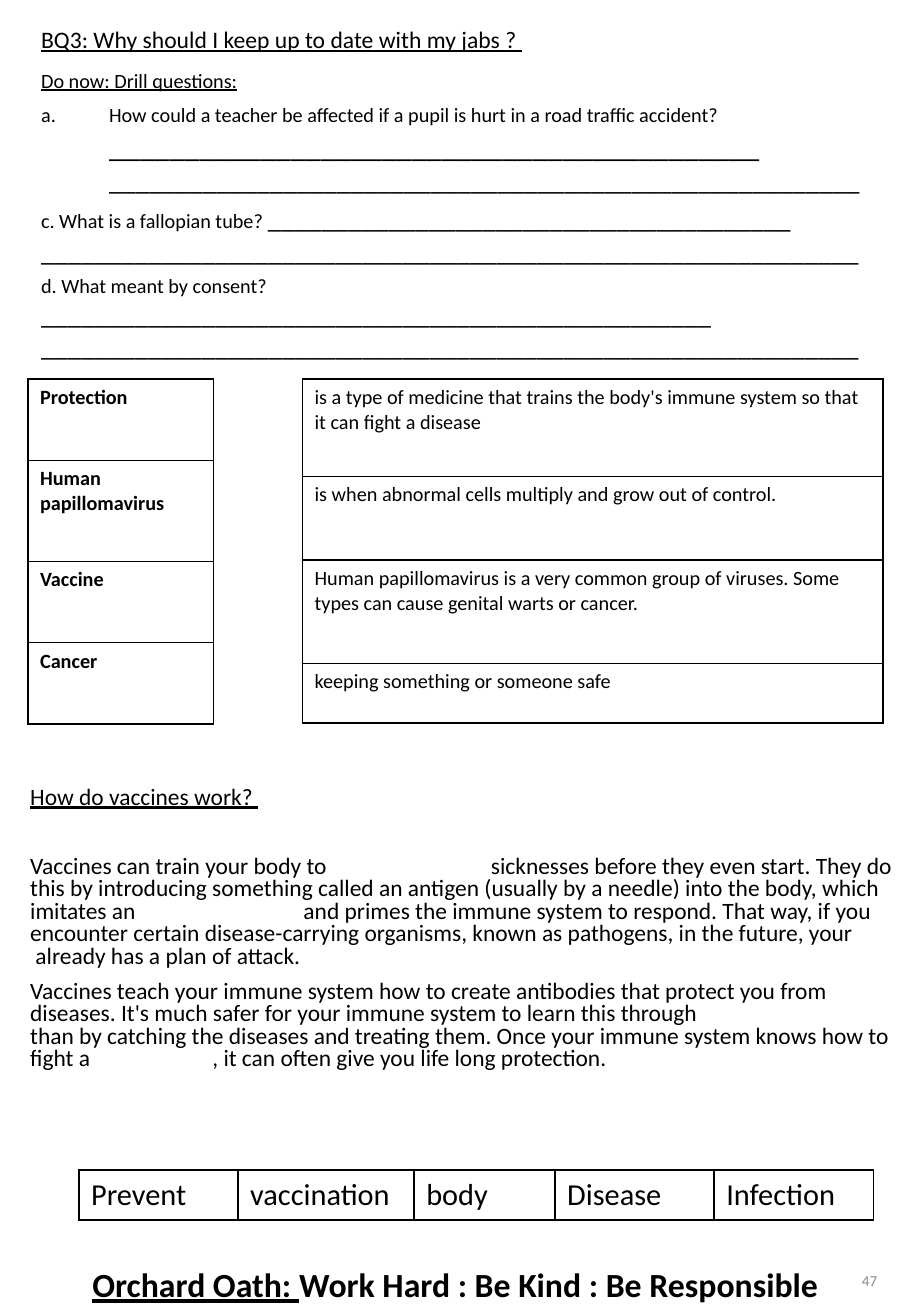
from lxml.etree import SubElement as Sub
from pptx import Presentation as Deck
from pptx.dml.color import RGBColor as Rgb
from pptx.enum.text import MSO_ANCHOR as Anchor, PP_ALIGN as Align
from pptx.oxml.ns import qn
from pptx.util import Pt

PX = 9144
HUE = {"ink": "000000", "page": "8C8C8C"}
FACE = "Calibri"
TAB = 75


def px(n):
    """Turn px into EMU."""
    return n * PX


def add_run(para, text, size, line=False, bold=False, hue="ink"):
    """Add one styled run, or a line break when the text is a newline."""
    if text == "\n":
        para.add_line_break()
        return
    run = para.add_run()
    run.text = text
    font = run.font
    font.name, font.size = FACE, Pt(size)
    font.bold, font.underline = bold, line
    font.color.rgb = Rgb.from_string(HUE[hue])


def add_box(slide, x, y, w, h, anchor=Anchor.TOP):
    """Add a wrapping text box and return its frame."""
    frame = slide.shapes.add_textbox(px(x), px(y), px(w), px(h)).text_frame
    frame.word_wrap = True
    frame.vertical_anchor = anchor
    return frame


def fill_box(frame, paras, gaps, space=1.0, align=Align.LEFT):
    """Write paragraphs of runs with a gap before each and return them."""
    made = []
    for runs, gap in zip(paras, gaps):
        para = frame.add_paragraph() if made else frame.paragraphs[0]
        para.alignment, para.line_spacing = align, space
        para.space_before = Pt(gap)
        for run in runs:
            add_run(para, *run)
        made.append(para)
    return made


def add_mark(para, dent):
    """Letter a paragraph with a hanging indent."""
    props = para._p.get_or_add_pPr()
    props.set("marL", str(px(dent)))
    props.set("indent", str(-px(dent)))
    Sub(props, qn("a:buFont"), typeface="+mj-lt")
    Sub(props, qn("a:buAutoNum"), type="alphaLcPeriod")


def add_tabs(para, count):
    """Set evenly spaced tab stops."""
    stops = Sub(para._p.get_or_add_pPr(), qn("a:tabLst"))
    for i in range(1, count + 1):
        Sub(stops, qn("a:tab"), pos=str(px(TAB * i)), algn="l")


def add_edge(cell):
    """Draw a thin border on every side of a cell."""
    props = cell._tc.get_or_add_tcPr()
    for side in ("lnL", "lnR", "lnT", "lnB"):
        edge = Sub(props, qn(f"a:{side}"), w=str(Pt(1)))
        Sub(Sub(edge, qn("a:solidFill")), qn("a:srgbClr"), val=HUE["ink"])


def add_grid(slide, x, y, cols, rows, cells, size, bold=False):
    """Add a bordered table filled row by row."""
    grid = slide.shapes.add_table(
        len(rows), len(cols), px(x), px(y), px(sum(cols)), px(sum(rows))).table
    grid.first_row = grid.horz_banding = False
    for col, wide in zip(grid.columns, cols):
        col.width = px(wide)
    for row, high in zip(grid.rows, rows):
        row.height = px(high)
    for cell, text in zip(grid.iter_cells(), cells):
        add_edge(cell)
        cell.fill.background()
        add_run(cell.text_frame.paragraphs[0], text, size, bold=bold)


def add_drill(slide):
    """Add the drill questions with their answer lines."""
    paras = [
        [("Do now: Drill questions:", 12, True)],
        [("How could a teacher be affected if a pupil is hurt in a road "
          "traffic accident?", 12), ("\n", 12), ("_" * 43, 18), ("\n", 12),
         ("_" * 56, 16)],
        [("c. What is a fallopian tube? ", 12), ("_" * 39, 16), ("\n", 12),
         ("_" * 61, 16)],
        [("d. What meant by consent?", 12), ("\n", 12), ("_" * 50, 16),
         ("\n", 12), ("_" * 61, 16)],
    ]
    made = fill_box(add_box(slide, 24, 51, 707, 338), paras, (0, 6.1, 3.7, 3.7))
    add_mark(made[1], 56)


def add_story(slide):
    """Add the vaccine text with its tabbed gaps."""
    size = 13.9
    two, three = ("\t\t", size, True), ("\t\t\t", size, True)
    paras = [
        [("How do vaccines work? ", size, True)],
        [("Vaccines can train your body to ", size), two,
         (" sicknesses before they even start. They do this by introducing "
          "something called an antigen (usually by a needle) into the body, "
          "which imitates an ", size), two,
         ("and primes the immune system to respond. That way, if you "
          "encounter certain disease-carrying organisms, known as pathogens, "
          "in the future, your ", size), two,
         (" already has a plan of attack.", size)],
        [("Vaccines teach your immune system how to create antibodies that "
          "protect you from diseases. It's much safer for your immune system "
          "to learn this through ", size), three,
         (" than by catching the diseases and treating them. Once your immune "
          "system knows how to fight a ", size), two,
         (", it can often give you life long protection.", size)],
    ]
    made = fill_box(add_box(slide, 15, 643, 735, 300), paras, (0, 27.6, 7.5), 0.8)
    for para in made[1:]:
        add_tabs(para, 10)


def main():
    """Build the worksheet and save it."""
    deck = Deck()
    deck.slide_width, deck.slide_height = px(750), px(1083)
    slide = deck.slides.add_slide(deck.slide_layouts[6])
    oath = [("Orchard Oath: ", 20, True, True),
            ("Work Hard : Be Kind : Be Responsible", 20, False, True)]
    fill_box(add_box(slide, 0, 1039, 750, 44), [oath], [0], 0.9, Align.CENTER)
    fill_box(add_box(slide, 563, 1025, 169, 58, Anchor.MIDDLE),
             [[("47", 9, False, False, "page")]], [0], align=Align.RIGHT)
    fill_box(add_box(slide, 24, 8, 703, 51, Anchor.MIDDLE),
             [[("BQ3: Why should I keep up to date with my jabs ? ", 14, True)]],
             [0], 0.9)
    add_drill(slide)
    add_grid(slide, 23, 312, [153], [67, 83, 67, 67],
             ["Protection", "Human papillomavirus", "Vaccine", "Cancer"], 12, True)
    add_grid(slide, 249, 312, [478], [80, 69, 85, 49], [
        "is a type of medicine that trains the body's immune system so that "
        "it can fight a disease",
        "is when abnormal cells multiply and grow out of control.",
        "Human papillomavirus is a very common group of viruses. Some types "
        "can cause genital warts or cancer.",
        "keeping something or someone safe"], 12)
    add_story(slide)
    add_grid(slide, 65, 963, [131, 145, 116, 131, 131], [41],
             ["Prevent", "vaccination", "body", "Disease", "Infection"], 18)
    deck.save("out.pptx")


if __name__ == "__main__":
    main()
